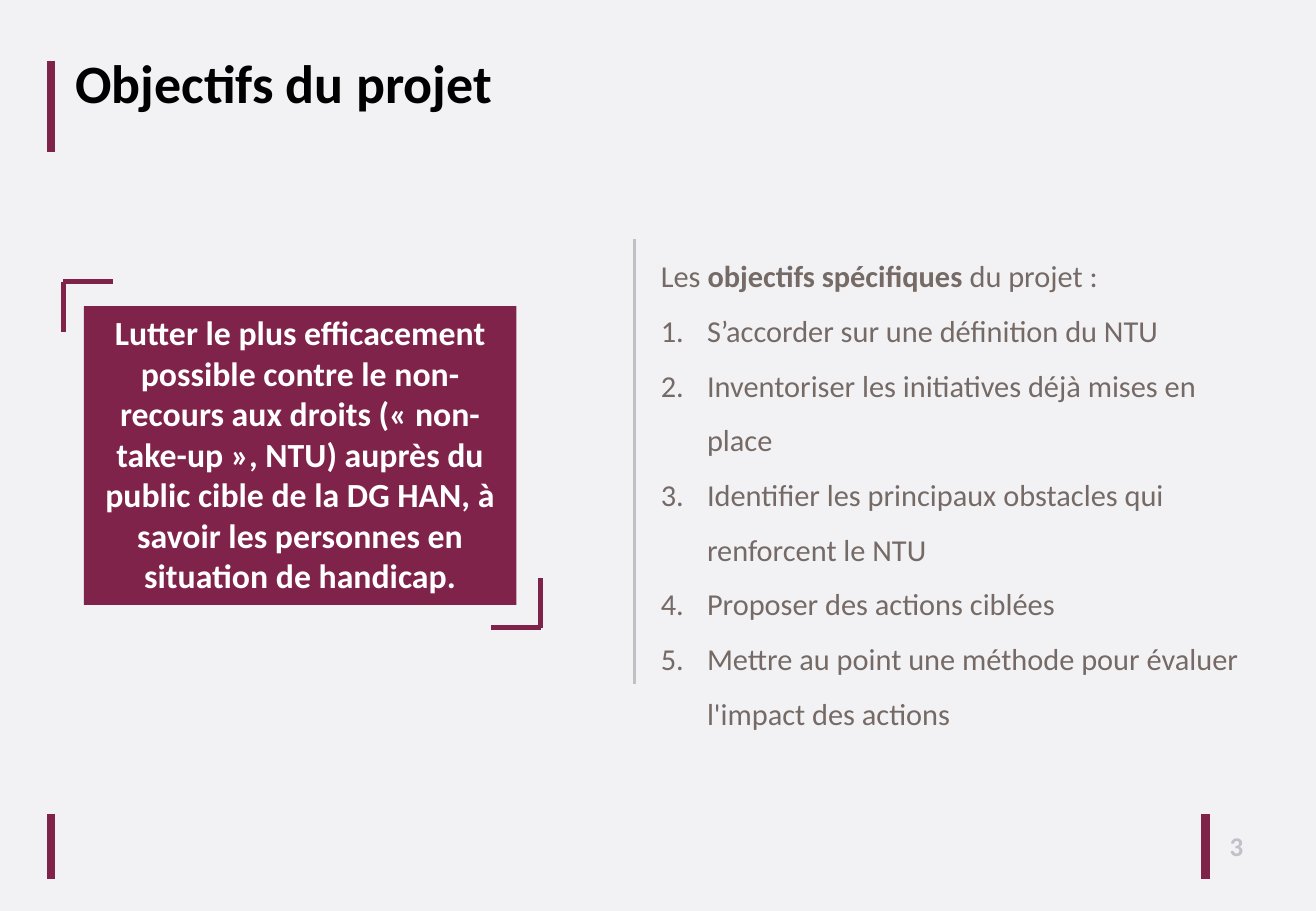
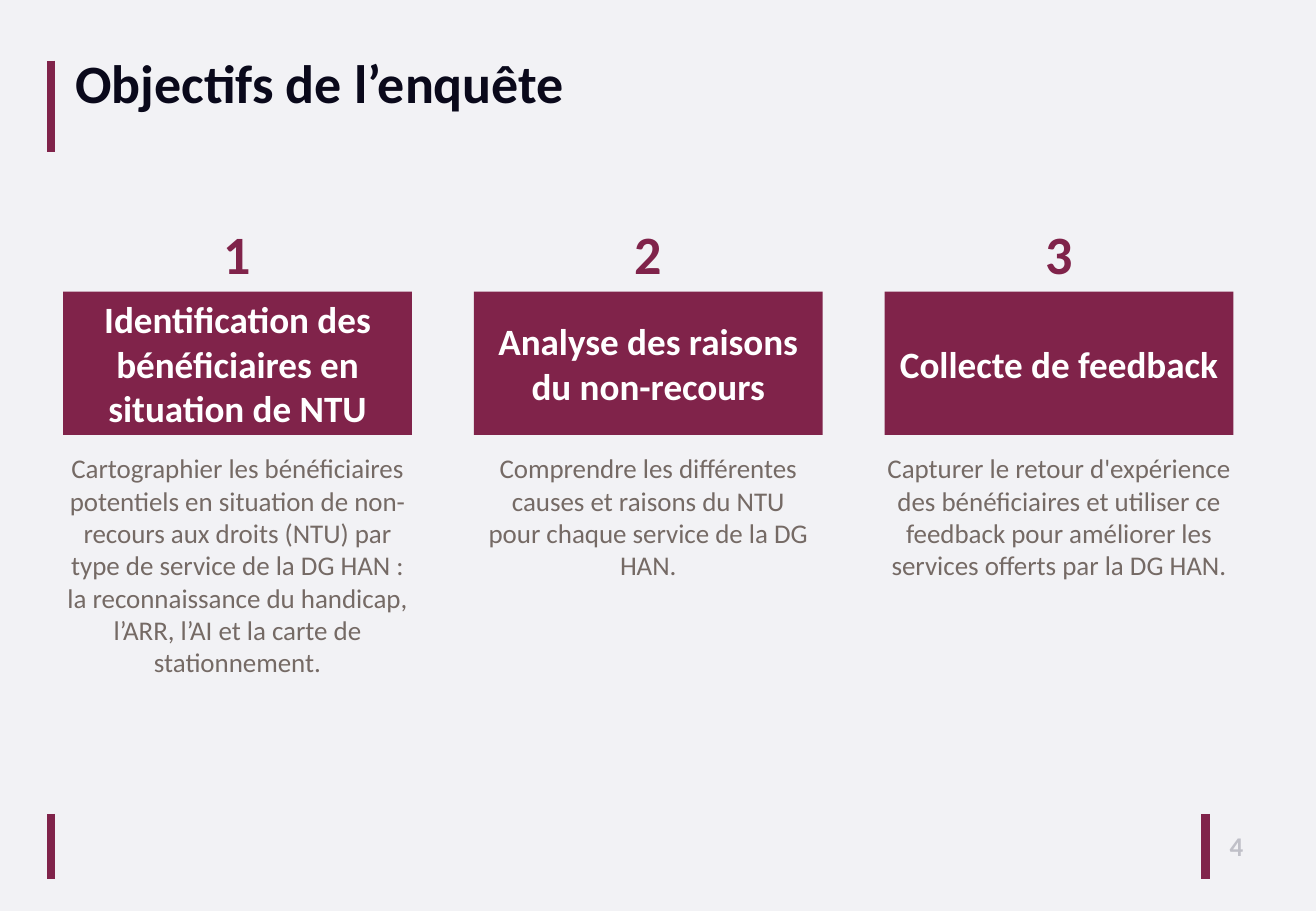
from dataclasses import dataclass

from lxml.etree import SubElement as Sub
from pptx import Presentation as Deck
from pptx.dml.color import RGBColor as Rgb
from pptx.enum.shapes import MSO_CONNECTOR as Link, MSO_SHAPE as Form
from pptx.enum.text import MSO_ANCHOR as Anchor, PP_ALIGN as Align
from pptx.oxml.ns import qn
from pptx.slide import Slide
from pptx.util import Inches, Pt

PLUM, GREY, TAUPE = "80234A", "C0C0C8", "756A65"
WHITE, BLACK, NAVY, PAPER = "FFFFFF", "000000", "0A091B", "F2F2F5"
FONT = "Calibri"


@dataclass(frozen=True)
class Box:
    left: float
    top: float
    width: float
    height: float


@dataclass(frozen=True)
class Style:
    size: int
    color: str
    bold: bool = False
    align: Align = Align.LEFT
    anchor: Anchor = Anchor.TOP
    lead: float | Pt | None = None


@dataclass(frozen=True)
class Span:
    text: str
    bold: bool = False


@dataclass(frozen=True)
class Line:
    spans: tuple[Span, ...]
    listed: bool = False


@dataclass(frozen=True)
class Card:
    head: str
    body: str
    width: float


BAND = Style(20, WHITE, True, Align.CENTER)
HEAD = Style(22, WHITE, True, Align.CENTER, Anchor.MIDDLE)
COUNT = Style(32, PLUM, True, Align.CENTER, Anchor.MIDDLE)
BODY = Style(16, TAUPE, align=Align.CENTER)
GOAL = Style(18, TAUPE, lead=1.5)
FOOT = Style(16, GREY, True)

BARS = ((0.42, 0.5, 1.25), (0.42, 6.7, 7.24), (9.92, 6.7, 7.24))
MISSION = (
    "Lutter le plus efficacement possible contre le non-recours aux droits "
    "(« non-take-up », NTU) auprès du public cible de la DG HAN, à savoir "
    "les personnes en situation de handicap."
)
INTRO = Line((Span("Les "), Span("objectifs spécifiques ", True), Span("du projet :")))
GOALS = (
    "S’accorder sur une définition du NTU",
    "Inventoriser les initiatives déjà mises en place",
    "Identifier les principaux obstacles qui renforcent le NTU",
    "Proposer des actions ciblées",
    "Mettre au point une méthode pour évaluer l'impact des actions",
)
CARDS = (
    Card(
        "Identification des bénéficiaires en situation de NTU",
        "Cartographier les bénéficiaires potentiels en situation de non-recours "
        "aux droits (NTU) par type de service de la DG HAN : la reconnaissance "
        "du handicap, l’ARR, l’AI et la carte de stationnement.",
        3.05,
    ),
    Card(
        "Analyse des raisons du non-recours",
        "Comprendre les différentes causes et raisons du NTU pour chaque "
        "service de la DG HAN.",
        2.88,
    ),
    Card(
        "Collecte de feedback",
        "Capturer le retour d'expérience des bénéficiaires et utiliser ce "
        "feedback pour améliorer les services offerts par la DG HAN.",
        3.12,
    ),
)


def paint(target, color: str) -> None:
    if hasattr(target, "solid"):
        target.solid()
        target = target.fore_color
    target.rgb = Rgb.from_string(color)


def place(box: Box) -> tuple:
    return tuple(map(Inches, (box.left, box.top, box.width, box.height)))


def number(para) -> None:
    props = para._p.get_or_add_pPr()
    props.set("marL", str(Inches(0.38)))
    props.set("indent", str(-Inches(0.38)))
    tint = Sub(props, qn("a:buClr"))
    Sub(tint, qn("a:srgbClr"), val=TAUPE)
    Sub(props, qn("a:buFont"), typeface="+mj-lt")
    Sub(props, qn("a:buAutoNum"), type="arabicPeriod")


def write(frame, lines: list[Line], style: Style) -> None:
    frame.word_wrap = True
    frame.vertical_anchor = style.anchor
    for pos, line in enumerate(lines):
        para = frame.add_paragraph() if pos else frame.paragraphs[0]
        para.alignment = style.align
        if line.listed:
            number(para)
        if style.lead:
            para.line_spacing = style.lead
        for span in line.spans:
            run = para.add_run()
            run.text = span.text
            run.font.name = FONT
            run.font.size = Pt(style.size)
            run.font.bold = style.bold or span.bold
            paint(run.font.color, style.color)


def plain(text: str) -> list[Line]:
    return [Line((Span(text),))]


def label(slide: Slide, box: Box, lines: list[Line], style: Style) -> None:
    write(slide.shapes.add_textbox(*place(box)).text_frame, lines, style)


def block(slide: Slide, box: Box, text: str, style: Style) -> None:
    shape = slide.shapes.add_shape(Form.RECTANGLE, *place(box))
    shape.shadow.inherit = False
    paint(shape.fill, PLUM)
    shape.line.fill.background()
    write(shape.text_frame, plain(text), style)


def stroke(slide: Slide, x: float, y: float, to_x: float, to_y: float,
           color: str, width: float) -> None:
    ends = map(Inches, (x, y, to_x, to_y))
    line = slide.shapes.add_connector(Link.STRAIGHT, *ends)
    paint(line.line.fill, color)
    line.line.width = Pt(width)
    Sub(line._element.spPr, qn("a:effectLst"))


def corner(slide: Slide, x: float, y: float, arm: float) -> None:
    stroke(slide, x, y + arm, x, y, PLUM, 3)
    stroke(slide, x, y, x + arm, y, PLUM, 3)


def start(deck, title: str, color: str, page: int) -> Slide:
    slide = deck.slides.add_slide(deck.slide_layouts[6])
    paint(slide.background.fill, PAPER)
    for x, top, end in BARS:
        stroke(slide, x, top, x, end, PLUM, 5)
    label(slide, Box(0.52, 0.42, 9.4, 0.58), plain(title),
          Style(32, color, True, lead=Pt(34)))
    label(slide, Box(10.02, 6.78, 0.75, 0.37), plain(str(page)), FOOT)
    return slide


def project(deck) -> None:
    slide = start(deck, "Objectifs du projet", BLACK, 3)
    block(slide, Box(0.69, 2.52, 3.56, 2.46), MISSION, BAND)
    corner(slide, 0.52, 2.32, 0.41)
    corner(slide, 4.45, 5.17, -0.41)
    goals = [Line((Span(goal),), True) for goal in GOALS]
    label(slide, Box(5.34, 1.92, 5.18, 3.69), [INTRO, *goals], GOAL)
    stroke(slide, 5.22, 1.97, 5.22, 5.63, GREY, 2)


def survey(deck) -> None:
    slide = start(deck, "Objectifs de l’enquête", NAVY, 4)
    width, pitch = 2.87, 3.38
    for pos, card in enumerate(CARDS):
        left = 0.52 + pos * pitch
        mid = left + width / 2
        label(slide, Box(mid - 0.25, 1.86, 0.5, 0.44), plain(str(pos + 1)), COUNT)
        block(slide, Box(left, 2.4, width, 1.18), card.head, HEAD)
        label(slide, Box(mid - card.width / 2, 3.67, card.width, 1.99),
              plain(card.body), BODY)


def main() -> None:
    deck = Deck()
    deck.slide_width, deck.slide_height = Inches(10.83), Inches(7.5)
    project(deck)
    survey(deck)
    deck.save("out.pptx")


if __name__ == "__main__":
    main()
